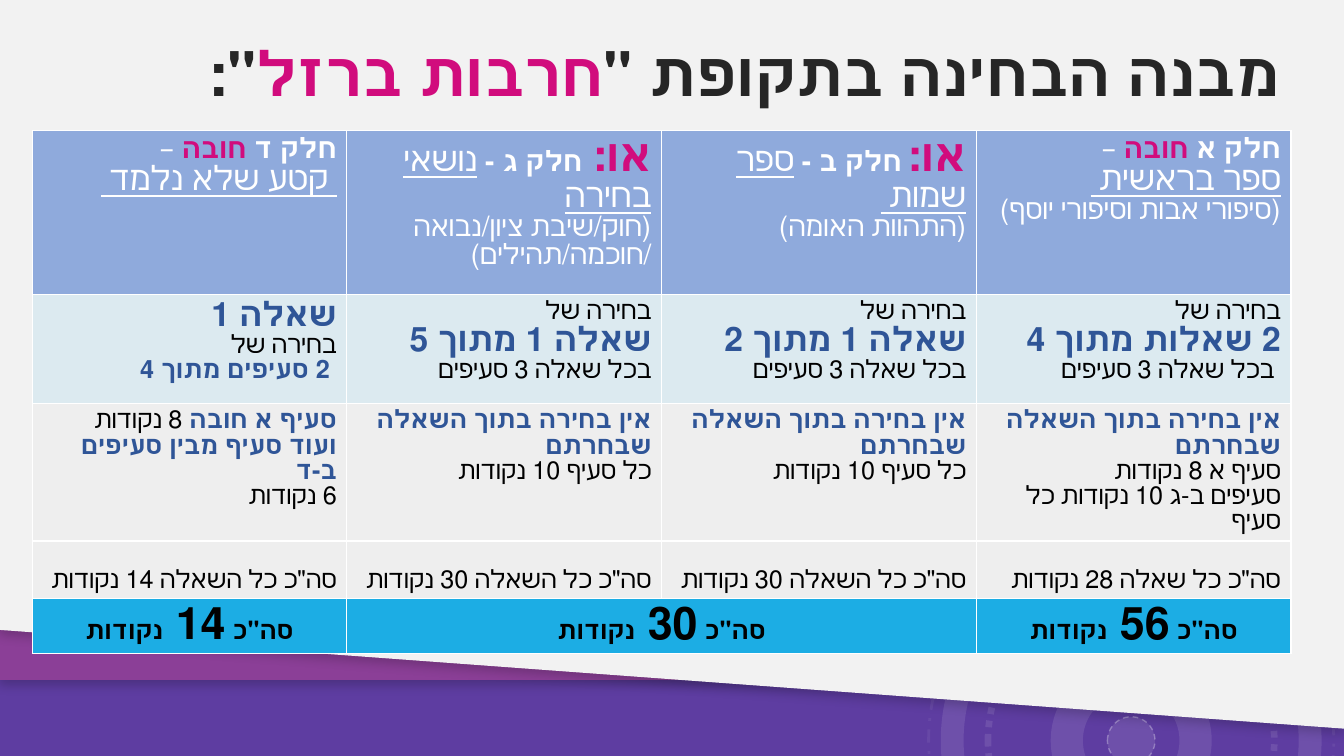
from collections import namedtuple

from lxml import etree
from pptx import Presentation
from pptx.dml.color import RGBColor
from pptx.enum.dml import MSO_LINE
from pptx.enum.shapes import MSO_SHAPE
from pptx.enum.text import MSO_ANCHOR, PP_ALIGN
from pptx.oxml.ns import qn
from pptx.util import Pt

DONUT, OVAL, ARC = MSO_SHAPE.DONUT, MSO_SHAPE.OVAL, MSO_SHAPE.BLOCK_ARC
DASH, DASH_DOT, ROUND_DOT = MSO_LINE.DASH, MSO_LINE.DASH_DOT, MSO_LINE.ROUND_DOT
RIGHT, CENTER = PP_ALIGN.RIGHT, PP_ALIGN.CENTER
TOP, MIDDLE, BOTTOM = MSO_ANCHOR.TOP, MSO_ANCHOR.MIDDLE, MSO_ANCHOR.BOTTOM

WHITE = RGBColor(0xFF, 0xFF, 0xFF)
BLACK = RGBColor(0, 0, 0)
CHARCOAL = RGBColor(0x26, 0x26, 0x26)
PINK = RGBColor(0xD1, 0x0C, 0x7D)
BLUE = RGBColor(0x2F, 0x55, 0x97)
HEADER_BLUE = RGBColor(0x8F, 0xAA, 0xDC)
SKY = RGBColor(0x1C, 0xAD, 0xE4)
GRAY = RGBColor(0xD9, 0xD9, 0xD9)
VIOLET = RGBColor(0x5E, 0x3D, 0xA1)
PURPLE = RGBColor(0x8B, 0x3F, 0x97)
PAPER = RGBColor(0xF2, 0xF2, 0xF2)
FONT = "Calibri"
WIDTH, HEIGHT = 960, 540

Style = namedtuple("Style", "size color bold underline", defaults=(False, False))
TITLE, TITLE_PINK = Style(44, CHARCOAL, True), Style(44, PINK, True)
PART, PART_PINK = Style(20, WHITE, True), Style(20, PINK, True)
OR_PINK = Style(32, PINK, True)
DETAIL, SUBJECT = Style(20, WHITE), Style(24, WHITE, False, True)
BODY, BODY_BLUE, CHOICE = Style(18, BLACK), Style(18, BLUE, True), Style(24, BLUE, True)
TOTAL, SCORE = Style(18, BLACK, True), Style(32, BLACK, True)

NO_CHOICE = [
    [("אין בחירה בתוך השאלה שבחרתם", BODY_BLUE)],
    [("כל סעיף 10 נקודות", BODY)],
]


def choice(first, count, last):
    """Return the paragraph that tells how many questions to choose."""
    return [[(first, BODY), (count, CHOICE), (last, BODY)]]


def question_total(text):
    """Return the paragraph with the points of one question."""
    return [[(text, BODY)]]


def part_total(points):
    """Return the paragraph with the points of a whole part."""
    return [[('סה"כ ', TOTAL), (f"{points} ", SCORE), ("נקודות", TOTAL)]]


HEADERS = [
    [[("חלק ד ", PART), ("חובה ", PART_PINK), ("–", DETAIL)],
     [(" קטע שלא נלמד ", SUBJECT)]],
    [[("או: ", OR_PINK), ("חלק ג - ", PART), ("נושאי בחירה\n", SUBJECT),
      ("(חוק/שיבת ציון/נבואה\n", DETAIL), ("/חוכמה/תהילים) ", DETAIL)]],
    [[("או:", OR_PINK), (" חלק ב - ", PART), ("ספר שמות \n", SUBJECT),
      ("(התהוות האומה) ", DETAIL)]],
    [[("חלק א ", PART), ("חובה ", PART_PINK), ("– ", DETAIL)],
     [("ספר בראשית ", SUBJECT)],
     [("(סיפורי אבות וסיפורי יוסף)", DETAIL)]],
]
CHOICES = [
    [[("שאלה 1", CHOICE)], [("בחירה של", BODY)], [(" 2 סעיפים מתוך 4 ", BODY_BLUE)]],
    choice("בחירה של \n", "שאלה 1 מתוך 5 \n", "בכל שאלה 3 סעיפים"),
    choice("בחירה של \n", "שאלה 1 מתוך 2\n", "בכל שאלה 3 סעיפים"),
    choice("בחירה של \n", "2 שאלות מתוך 4\n", " בכל שאלה 3 סעיפים"),
]
SECTIONS = [
    [[("סעיף א חובה ", BODY_BLUE), ("8 נקודות", BODY)],
     [("ועוד סעיף מבין סעיפים ב-ד", BODY_BLUE)],
     [("6 נקודות", BODY)]],
    NO_CHOICE,
    NO_CHOICE,
    [NO_CHOICE[0], [("סעיף א 8 נקודות", BODY)], [("סעיפים ב-ג 10 נקודות כל סעיף", BODY)]],
]
QUESTION_TOTALS = [
    question_total('סה"כ כל השאלה 14 נקודות'),
    question_total('סה"כ כל השאלה 30 נקודות'),
    question_total('סה"כ כל השאלה 30 נקודות'),
    question_total('סה"כ כל שאלה 28 נקודות'),
]
PART_TOTALS = [part_total(14), part_total(30), None, part_total(56)]
ROWS = [
    (117, HEADERS, HEADER_BLUE, 100, RIGHT, TOP),
    (78, CHOICES, SKY, 10, RIGHT, TOP),
    (98, SECTIONS, GRAY, 13, RIGHT, TOP),
    (41, QUESTION_TOTALS, GRAY, 13, RIGHT, BOTTOM),
    (39, PART_TOTALS, SKY, 100, CENTER, MIDDLE),
]


def set_opacity(parent, percent):
    """Set the opacity of the solid fill inside a parent element."""
    color = parent.find(qn("a:solidFill")).find(qn("a:srgbClr"))
    etree.SubElement(color, qn("a:alpha"), val=str(percent * 1000))


def add_ring(slide, kind, center, size, fill=None, line=None, rotation=0, adjustments=()):
    """Add a translucent white round shape about a center."""
    x, y = center
    shape = slide.shapes.add_shape(kind, Pt(x - size / 2), Pt(y - size / 2), Pt(size), Pt(size))
    shape.shadow.inherit = False
    shape.rotation = rotation
    for index, value in enumerate(adjustments):
        shape.adjustments[index] = value
    properties = shape._element.spPr
    if fill:
        shape.fill.solid()
        shape.fill.fore_color.rgb = WHITE
        set_opacity(properties, fill)
    else:
        shape.fill.background()
    if line:
        width, dash, opacity = line
        shape.line.color.rgb = WHITE
        shape.line.width = Pt(width)
        shape.line.dash_style = dash
        set_opacity(properties.find(qn("a:ln")), opacity)
    else:
        shape.line.fill.background()


def add_sheet(slide, left_bottom, right_bottom, color):
    """Add a full-width sheet with a slanted lower edge and a soft shadow."""
    builder = slide.shapes.build_freeform(0, 0)
    corners = [(WIDTH, 0), (WIDTH, right_bottom), (0, left_bottom)]
    builder.add_line_segments([(Pt(x), Pt(y)) for x, y in corners])
    shape = builder.convert_to_shape()
    shape.fill.solid()
    shape.fill.fore_color.rgb = color
    shape.line.fill.background()
    shape.shadow.inherit = False
    effects = shape._element.spPr.find(qn("a:effectLst"))
    shadow = etree.SubElement(effects, qn("a:outerShdw"), blurRad=str(Pt(8)),
                              dist=str(Pt(4)), dir="5400000", rotWithShape="0")
    shade = etree.SubElement(shadow, qn("a:srgbClr"), val=str(BLACK))
    etree.SubElement(shade, qn("a:alpha"), val="20000")


def write_paragraph(paragraph, runs, alignment):
    """Write styled runs into a right-to-left paragraph."""
    paragraph.alignment = alignment
    paragraph._p.get_or_add_pPr().set("rtl", "1")
    for text, style in runs:
        run = paragraph.add_run()
        run.text = text.rstrip("\n")
        run.font.name = FONT
        run.font.size = Pt(style.size)
        run.font.bold = style.bold
        run.font.underline = style.underline
        run.font.color.rgb = style.color
        if text.endswith("\n"):
            paragraph.add_line_break()


def add_title(slide):
    """Fill the title placeholder and bring it in front of the backdrop."""
    title = slide.shapes.title
    slide.shapes._spTree.append(title._element)
    title.left, title.top, title.width, title.height = Pt(58.3), Pt(26), Pt(863.3), Pt(57)
    title.text_frame.vertical_anchor = MIDDLE
    paragraph = title.text_frame.paragraphs[0]
    paragraph.line_spacing = 0.9
    runs = [('מבנה הבחינה בתקופת "', TITLE), ("חרבות ברזל", TITLE_PINK), ('":', TITLE)]
    write_paragraph(paragraph, runs, RIGHT)


def format_cell(cell, color, opacity, anchor):
    """Set the fill, white borders and anchor of a table cell."""
    cell.vertical_anchor = anchor
    cell.fill.solid()
    cell.fill.fore_color.rgb = color
    properties = cell._tc.get_or_add_tcPr()
    set_opacity(properties, opacity)
    for index, side in enumerate(("a:lnL", "a:lnR", "a:lnT", "a:lnB")):
        border = etree.Element(qn(side), w=str(Pt(1)))
        fill = etree.SubElement(border, qn("a:solidFill"))
        etree.SubElement(fill, qn("a:srgbClr"), val=str(WHITE))
        properties.insert(index, border)


def add_exam_table(slide):
    """Add the table of exam parts."""
    height = sum(row[0] for row in ROWS)
    frame = slide.shapes.add_table(len(ROWS), 4, Pt(23), Pt(93.4), Pt(899.2), Pt(height))
    table = frame.table
    table.first_row = table.horz_banding = False
    for row, (height, contents, color, opacity, alignment, anchor) in enumerate(ROWS):
        table.rows[row].height = Pt(height)
        for column, paragraphs in enumerate(contents):
            cell = table.cell(row, column)
            format_cell(cell, color, opacity, anchor)
            for index, runs in enumerate(paragraphs or []):
                text_frame = cell.text_frame
                paragraph = text_frame.add_paragraph() if index else text_frame.paragraphs[0]
                write_paragraph(paragraph, runs, alignment)
    table.cell(4, 1).merge(table.cell(4, 2))


def add_backdrop(slide):
    """Add the rings and the slanted sheets behind the content."""
    center = (808, 529)
    add_ring(slide, DONUT, center, 115, fill=10, adjustments=[0.2])
    add_ring(slide, DONUT, center, 272, fill=10, adjustments=[0.06])
    add_ring(slide, OVAL, center, 289.4, line=(2, DASH_DOT, 5))
    add_ring(slide, OVAL, center, 204.5, line=(4.75, ROUND_DOT, 10))
    add_ring(slide, OVAL, center, 34, fill=10, line=(1, DASH, 30))
    for size, rotation, opacity in ((181.4, 105.5, 30), (181.4, 195.2, 30), (144.7, 141.4, 15)):
        add_ring(slide, ARC, center, size, opacity, None, rotation, [108, 121.83, 0.05])
    add_sheet(slide, 486, 486, PURPLE)
    add_sheet(slide, 450, 520.5, PAPER)


def main():
    """Build the slide and save it."""
    presentation = Presentation()
    presentation.slide_width, presentation.slide_height = Pt(WIDTH), Pt(HEIGHT)
    slide = presentation.slides.add_slide(presentation.slide_layouts[5])
    slide.background.fill.solid()
    slide.background.fill.fore_color.rgb = VIOLET
    add_backdrop(slide)
    add_title(slide)
    add_exam_table(slide)
    presentation.save("out.pptx")


if __name__ == "__main__":
    main()
